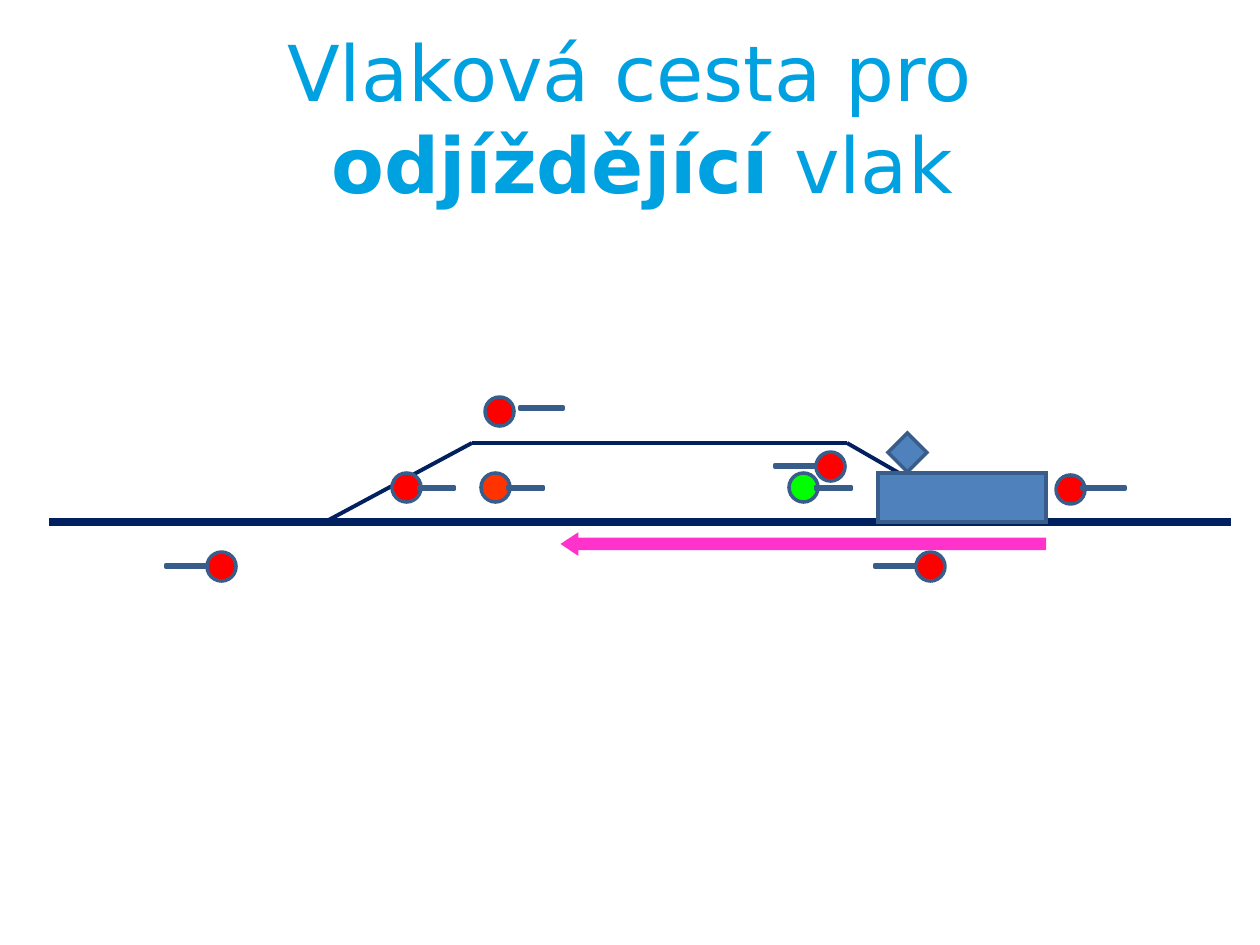
from pptx import Presentation
from pptx.dml.color import RGBColor
from pptx.enum.shapes import MSO_CONNECTOR, MSO_SHAPE
from pptx.enum.text import MSO_ANCHOR, MSO_AUTO_SIZE, PP_ALIGN
from pptx.oxml.ns import qn
from pptx.util import Emu, Pt
from lxml import etree

LINE = MSO_CONNECTOR.STRAIGHT
LAMP = MSO_SHAPE.FLOWCHART_CONNECTOR
ARM = MSO_SHAPE.MATH_MINUS
WAGON = MSO_SHAPE.FLOWCHART_PROCESS
DIAMOND = MSO_SHAPE.DIAMOND
ARROW = MSO_SHAPE.LEFT_ARROW

EMU_PER_PX = 914400 / 126
TITLE_BLUE, TRACK_NAVY = "00A1E0", "002060"
STEEL, STEEL_EDGE = "4F81BD", "385D8A"
RED, ORANGE, GREEN, PINK = "FF0000", "FF3300", "00FF00", "FF33CC"

LAMP_SIZE, ARM_HEIGHT = 29, 10
# Arm placement relative to its lamp: dx, dy, width
ARM_LEFT = (-49, 9, 59)
ARM_RIGHT = (18, 8, 59)
ARM_APART = (27, 6, 59)
ARM_SHORT = (20, 10, 49)


def px(value):
    return Emu(round(value * EMU_PER_PX))


def color(hex_text):
    return RGBColor.from_string(hex_text)


def add_part(page, kind, box, fill, edge=STEEL_EDGE, width=2, sharp=False):
    shape = page.shapes.add_shape(kind, *map(px, box))
    shape.shadow.inherit = False
    shape.fill.solid()
    shape.fill.fore_color.rgb = color(fill)
    shape.line.color.rgb = color(edge)
    shape.line.width = Pt(width)
    if sharp:
        outline = shape.line._get_or_add_ln()
        etree.SubElement(outline, qn("a:miter"), lim="800000")
    return shape


def add_track(page, start, end, width):
    track = page.shapes.add_connector(LINE, *map(px, (*start, *end)))
    track.line.color.rgb = color(TRACK_NAVY)
    track.line.width = Pt(width)
    etree.SubElement(track._element.spPr, qn("a:effectLst"))


def add_signal(page, left, top, fill, arm):
    dx, dy, width = arm
    parts = [
        (LAMP, (left, top, LAMP_SIZE, LAMP_SIZE), fill),
        (ARM, (left + dx, top + dy, width, ARM_HEIGHT), STEEL),
    ]
    # A left arm lies behind its lamp, a right arm in front
    for part in reversed(parts) if dx < 0 else parts:
        add_part(page, *part)


def add_title(page, box):
    title = page.shapes.title
    title.left, title.top, title.width, title.height = map(px, box)
    frame = title.text_frame
    settings = dict(margin_left=0, margin_top=0, margin_right=0, margin_bottom=0,
                    word_wrap=True, auto_size=MSO_AUTO_SIZE.NONE,
                    vertical_anchor=MSO_ANCHOR.MIDDLE)
    for name, value in settings.items():
        setattr(frame, name, value)
    para = frame.paragraphs[0]
    para.alignment = PP_ALIGN.CENTER
    for text, bold in (("Vlaková cesta pro", False), (" ", False),
                       ("odjíždějící", True), (" vlak", False)):
        if text == " ":
            para.add_line_break()
        span = para.add_run()
        span.text = text
        font = dict(name="DejaVu Sans", size=Pt(44), bold=bold)
        for name, value in font.items():
            setattr(span.font, name, value)
        span.font.color.rgb = color(TITLE_BLUE)


def add_station(page, left, top):
    """Station plan; its origin is the left end of the main track."""
    def at(x, y):
        return left + x, top + y

    # Main track and passing loop
    add_track(page, at(0, 0), at(1182, 0), 4.5)
    loop = [at(276, 0), at(423, -79), at(798, -79), at(935, 0)]
    for start, end in zip(loop, loop[1:]):
        add_track(page, start, end, 2.25)

    # Signals facing right, then the departure route
    for x, y, arm in ((158, 30, ARM_LEFT), (767, -70, ARM_LEFT),
                      (867, 30, ARM_LEFT), (1007, -47, ARM_RIGHT)):
        add_signal(page, *at(x, y), RED, arm)
    route = add_part(page, ARROW, (*at(521, 20), 471, 4), PINK, PINK, 6, True)
    route.adjustments[0], route.adjustments[1] = 0.5, 0.761

    # Train with its pantograph
    add_part(page, WAGON, (*at(829, -49), 168, 49), STEEL, sharp=True)
    add_part(page, DIAMOND, (*at(839, -89), 39, 39), STEEL, sharp=True)

    # Signals along the route and the loop
    for x, y, fill, arm in ((436, -125, RED, ARM_APART), (343, -49, RED, ARM_SHORT),
                            (432, -49, ORANGE, ARM_SHORT), (740, -49, GREEN, ARM_SHORT)):
        add_signal(page, *at(x, y), fill, arm)


def main():
    deck = Presentation()
    deck.slide_width, deck.slide_height = px(1260), px(945)
    page = deck.slides.add_slide(deck.slide_layouts[5])
    add_title(page, (63, 18, 1134, 197))
    add_station(page, 49, 522)
    deck.save("out.pptx")


if __name__ == "__main__":
    main()
